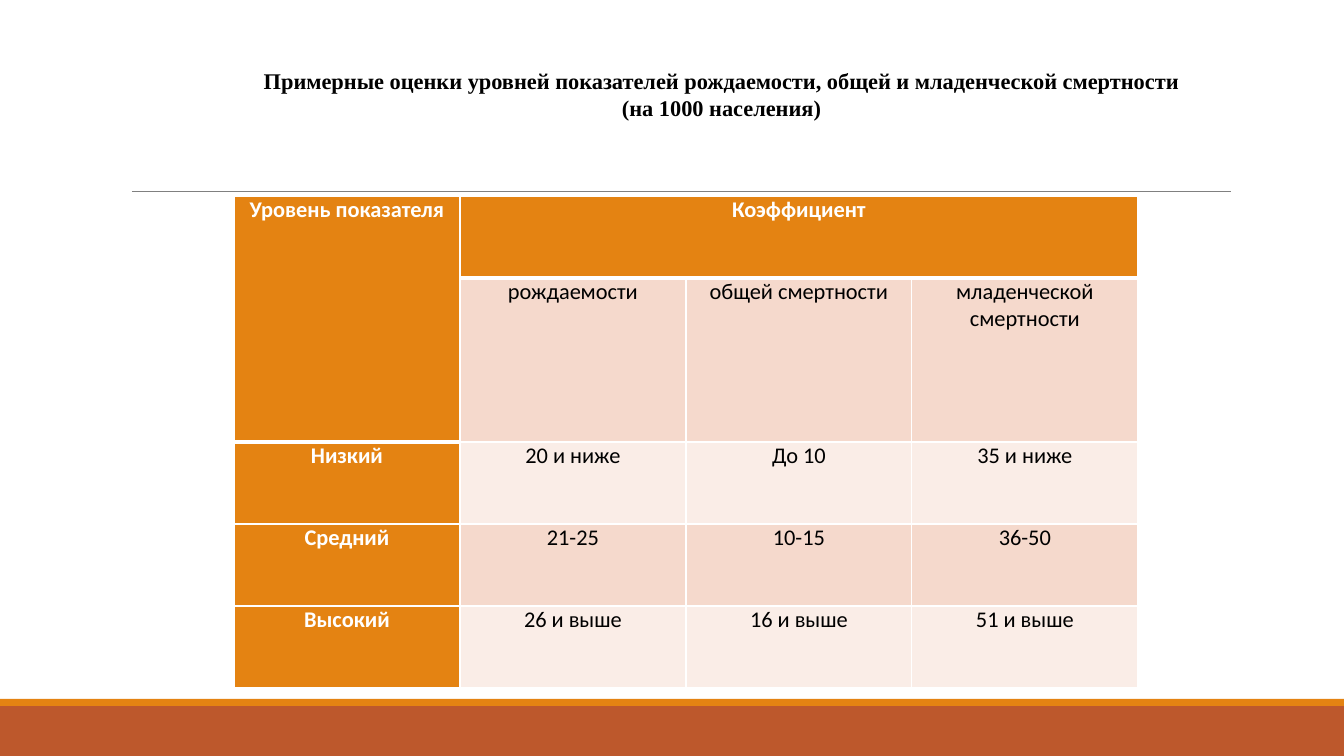
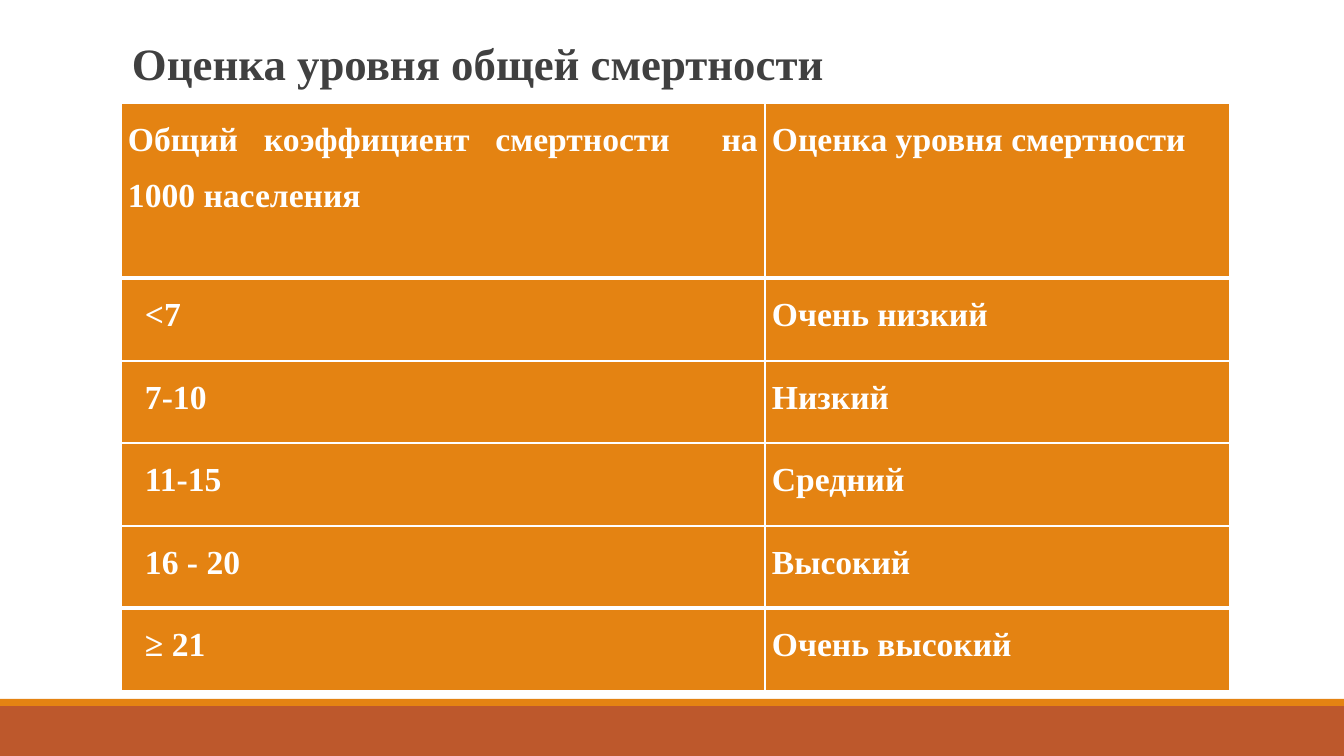
"""Build two slides with tables on birth and mortality levels."""
from dataclasses import dataclass
from itertools import product

from lxml.etree import SubElement
from pptx import Presentation
from pptx.dml.color import RGBColor as Rgb
from pptx.enum.shapes import MSO_CONNECTOR as Connector, MSO_SHAPE as Shape
from pptx.enum.text import MSO_ANCHOR as Anchor, MSO_AUTO_SIZE as AutoSize, PP_ALIGN as Align
from pptx.oxml.ns import qn
from pptx.util import Emu, Pt

WIDTH, HEIGHT = 1344, 756
EMU_PER_PX = 12192000 / WIDTH


def px(length):
    return Emu(round(length * EMU_PER_PX))


@dataclass(frozen=True)
class Theme:
    accent: str = "E48312"
    base: str = "BD582C"
    rule: str = "808080"
    white: str = "FFFFFF"
    black: str = "000000"
    heading: str = "404040"
    tints: tuple = ("FAEDE7", "F5D9CC")
    serif: str = "Times New Roman"
    sans: str = "Calibri"
    small: int = 16
    medium: int = 24
    large: int = 32
    hairline: float = 0.5
    thin: int = 1
    thick: int = 3


class Deck:
    def __init__(self, theme):
        self.theme = theme
        self.prs = Presentation()
        self.prs.slide_width, self.prs.slide_height = px(WIDTH), px(HEIGHT)
        self.slide = None

    def new_slide(self):
        self.slide = self.prs.slides.add_slide(self.prs.slide_layouts[5])
        self.band(706, 50, self.theme.base)
        self.band(699, 7, self.theme.accent)
        self.rule(132, 1231, 191)

    def band(self, top, height, color):
        band = self.slide.shapes.add_shape(Shape.RECTANGLE, 0, px(top), px(WIDTH), px(height))
        band.shadow.inherit = False
        band.fill.solid()
        band.fill.fore_color.rgb = Rgb.from_string(color)
        band.line.fill.background()

    def rule(self, left, right, y):
        rule = self.slide.shapes.add_connector(Connector.STRAIGHT, px(left), px(y), px(right), px(y))
        rule.line.color.rgb = Rgb.from_string(self.theme.rule)
        rule.line.width = Pt(self.theme.hairline)
        SubElement(rule.element.spPr, qn("a:effectLst"))

    def format(self, paragraph, align, font, size, color, bold):
        paragraph.alignment = align
        for run in paragraph.runs:
            run.font.name, run.font.size, run.font.bold = font, Pt(size), bold
            run.font.color.rgb = Rgb.from_string(color)

    def title(self, text, left, top, width, height, align, size, color):
        title = self.slide.shapes.title
        title.left, title.top, title.width, title.height = map(px, (left, top, width, height))
        frame = title.text_frame
        frame.text = text
        frame.word_wrap, frame.auto_size = True, AutoSize.NONE
        frame.vertical_anchor = Anchor.TOP
        frame.margin_left = frame.margin_right = px(10)
        frame.margin_top = frame.margin_bottom = px(5)
        for paragraph in frame.paragraphs:
            self.format(paragraph, align, self.theme.serif, size, color, True)

    def borders(self, cell, top, bottom):
        properties = cell._tc.get_or_add_tcPr()
        thin = self.theme.thin
        for side, width in (("L", thin), ("R", thin), ("T", top), ("B", bottom)):
            edge = SubElement(properties, qn(f"a:ln{side}"), w=str(Pt(width)))
            SubElement(SubElement(edge, qn("a:solidFill")), qn("a:srgbClr"), val=self.theme.white)

    def table(self, left, top, columns, rows, texts, look, thick_below, align, font, size,
              merges=(), line_spacing=None, space_before=None, indent=0):
        table = self.slide.shapes.add_table(
            len(rows), len(columns), px(left), px(top), px(sum(columns)), px(sum(rows))).table
        table.first_row = table.horz_banding = False
        for column, width in zip(table.columns, columns):
            column.width = px(width)
        for row, height in zip(table.rows, rows):
            row.height = px(height)
        weights = {True: self.theme.thick, False: self.theme.thin}
        for r, c in product(range(len(rows)), range(len(columns))):
            cell = table.cell(r, c)
            fill, color, bold = look(r, c)
            self.borders(cell, weights[(r - 1, c) in thick_below], weights[(r, c) in thick_below])
            cell.fill.solid()
            cell.fill.fore_color.rgb = Rgb.from_string(fill)
            cell.margin_left = px(7 + (indent if r and not c else 0))
            cell.margin_right = px(7)
            cell.margin_top = cell.margin_bottom = 0
            cell.text_frame.text = texts[r][c]
            paragraph = cell.text_frame.paragraphs[0]
            paragraph.line_spacing, paragraph.space_before = line_spacing, space_before
            self.format(paragraph, align, font, size, color, bold)
        for first, last in merges:
            table.cell(*first).merge(table.cell(*last))


def indicator_levels(deck):
    theme = deck.theme

    def look(row, column):
        if row == 0 or column == 0:
            return theme.accent, theme.white, True
        return theme.tints[row % 2], theme.black, False

    deck.new_slide()
    deck.title("Примерные оценки уровней показателей рождаемости, общей и младенческой смертности\n"
               "(на 1000 населения)", 200, 62, 1043, 93, Align.CENTER, theme.small, theme.black)
    levels = [
        ["Уровень показателя", "Коэффициент", "", ""],
        ["", "рождаемости", "общей смертности", "младенческой смертности"],
        ["Низкий", "20 и ниже", "До 10", "35 и ниже"],
        ["Средний", "21-25", "10-15", "36-50"],
        ["Высокий", "26 и выше", "16 и выше", "51 и выше"],
    ]
    deck.table(234, 196, [226] * 4, [82, 164, 82, 82, 82], levels, look,
               {(0, 0), (0, 1), (0, 2), (0, 3), (1, 0)}, Align.CENTER, theme.sans, theme.small,
               merges=[((0, 0), (1, 0)), ((0, 1), (0, 3))])


def mortality_levels(deck):
    theme = deck.theme
    deck.new_slide()
    deck.title("Оценка уровня общей смертности", 122, 31, 1108, 62,
               Align.LEFT, theme.large, theme.heading)
    levels = [
        ["Общий коэффициент смертности  на 1000 населения", "Оценка уровня смертности"],
        ["<7", "Очень низкий"],
        ["7-10", "Низкий"],
        ["11-15", "Средний"],
        ["16 - 20", "Высокий"],
        ["≥ 21", "Очень высокий"],
    ]
    deck.table(121, 103, [644, 465], [175, 83, 82, 83, 82, 83], levels,
               lambda row, column: (theme.accent, theme.white, True),
               set(product((0, 4), (0, 1))), Align.JUSTIFY, theme.serif, theme.medium,
               line_spacing=1.5, space_before=Pt(2), indent=17)


def main():
    deck = Deck(Theme())
    indicator_levels(deck)
    mortality_levels(deck)
    deck.prs.save("out.pptx")


if __name__ == "__main__":
    main()
